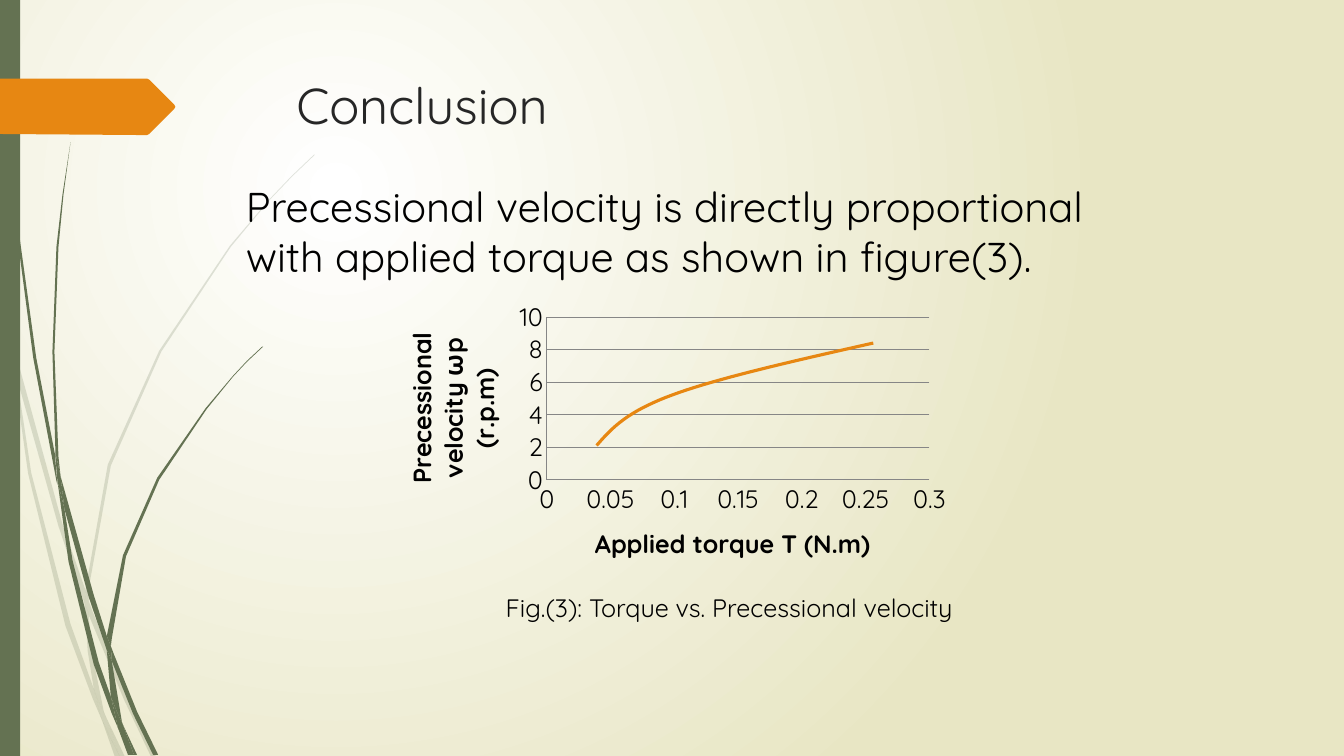
from lxml import etree
from pptx import Presentation
from pptx.chart.data import XyChartData
from pptx.dml.color import RGBColor
from pptx.enum.chart import XL_CHART_TYPE as Kind, XL_TICK_MARK as Tick
from pptx.enum.shapes import MSO_SHAPE as Preset
from pptx.enum.text import MSO_ANCHOR as Anchor, PP_ALIGN as Align
from pptx.oxml import parse_xml
from pptx.oxml.ns import qn
from pptx.util import Pt

FONT = "Quicksand"
GREEN, ORANGE, BLACK, GRAY = "647252", "E78712", "000000", "868686"
UNIT = Pt(72) / 100  # outlines are given in hundredths of an inch

PALE = [
    [(11, 350), (9, 322), (0, 282), (0, 299), (10, 344)],
    [(58, 522), (84, 599), (85, 586), (62, 520), (14, 345), (17, 376)],
    [(92, 607), (88, 596), (88, 610), (123, 694), (150, 751), (155, 751),
     (127, 692)],
    [(119, 751), (124, 751), (105, 711)],
    [(93, 683), (70, 619), (31, 469), (17, 376), (11, 350), (28, 470),
     (65, 621), (92, 693), (101, 714), (99, 707)],
    [(84, 599), (87, 646), (93, 683), (96, 692), (105, 711), (103, 706),
     (91, 646), (88, 610), (88, 608)],
    [(88, 584), (110, 462), (160, 349), (229, 245), (268, 198), (290, 175),
     (312, 154), (312, 153), (289, 175), (268, 197), (228, 244), (158, 348),
     (107, 461), (85, 584), (85, 586), (88, 596)],
    [(101, 714), (114, 751), (119, 751)],
    [(88, 608), (88, 610), (88, 596), (85, 586), (84, 599)],
    [(96, 692), (93, 683), (99, 707), (101, 714), (119, 751), (105, 711)],
]
DARK = [
    [(7, 110), (17, 233), (33, 355), (56, 477), (57, 481), (55, 457),
     (55, 453), (36, 355), (19, 232), (8, 109), (5, 48), (4, 0), (3, 0),
     (4, 48)],
    [(88, 592), (106, 645), (106, 631), (93, 590), (60, 472), (64, 505)],
    [(113, 649), (110, 641), (111, 656), (132, 708), (152, 749), (157, 749),
     (136, 706)],
    [(110, 691), (98, 657), (72, 556), (64, 505), (57, 477), (68, 557),
     (93, 659), (111, 708), (117, 722), (116, 717)],
    [(60, 472), (58, 453), (54, 349), (58, 245), (63, 193), (70, 141),
     (69.5, 141), (62, 193), (56, 245), (52, 349), (55, 449)],
    [(133, 749), (136, 749), (122, 719)],
    [(57, 477), (64, 505), (60, 472), (55, 449), (55, 453)],
    [(111, 633), (125, 552), (158, 476), (205, 406), (231, 374), (245, 359),
     (261, 344), (260, 344), (245, 358), (231, 373), (204, 405), (156, 474),
     (122, 551), (106, 631), (110, 641)],
    [(117, 722), (127, 749), (131, 749)],
    [(106, 645), (110, 691), (116, 706), (122, 719), (121, 716), (111, 656),
     (109, 651)],
    [(106, 645), (109, 651), (111, 656), (110, 641), (106, 631)],
    [(116, 706), (110, 691), (116, 717), (117, 722), (130, 749), (133, 749),
     (122, 719)],
]
ARROW = [(0, 78), (146, 78), (148, 79), (173, 104), (174, 106), (173, 108),
         (148, 133), (146, 134), (136, 134), (0, 133)]


def rgb(code):
    return RGBColor.from_string(code)


def paint(shape, code, alpha=100):
    """Give a shape a plain fill, no line and no shadow."""
    shape.shadow.inherit = False
    shape.line.fill.background()
    shape.fill.solid()
    shape.fill.fore_color.rgb = rgb(code)
    if alpha < 100:
        tone = shape.fill._xPr.find(".//" + qn("a:srgbClr"))
        etree.SubElement(tone, qn("a:alpha")).set("val", str(alpha * 1000))


def trace(slide, dots, code, alpha=100):
    """Draw a closed outline through the dots."""
    pen = slide.shapes.build_freeform(*dots[0], scale=UNIT)
    pen.add_line_segments(dots[1:], close=True)
    shape = pen.convert_to_shape()
    paint(shape, code, alpha)
    return shape


def grass(slide, blades, alpha=100):
    parts = [trace(slide, dots, GREEN, alpha) for dots in blades]
    slide.shapes.add_group_shape(parts)


def style(font, size, code=BLACK, bold=False):
    font.name, font.size, font.bold = FONT, Pt(size), bold
    font.color.rgb = rgb(code)


def write(shape, text, size, code=BLACK, anchor=Anchor.TOP, wrap=True):
    frame = shape.text_frame
    frame.text = text
    frame.word_wrap = wrap
    frame.vertical_anchor = anchor
    line = frame.paragraphs[0]
    line.alignment = Align.LEFT
    style(line.runs[0].font, size, code)


def box(slide, area, text, size, **more):
    write(slide.shapes.add_textbox(*map(Pt, area)), text, size, **more)


def backdrop(slide):
    fill = slide.background.fill
    fill.gradient()
    grad = fill._xPr.find(qn("a:gradFill"))
    for part in list(grad):
        grad.remove(part)
    stops = etree.SubElement(grad, qn("a:gsLst"))
    for place, code in ((0, "FFFFFF"), (100, "E8E6C4")):
        stop = etree.SubElement(stops, qn("a:gs"), pos=str(place * 1000))
        etree.SubElement(stop, qn("a:srgbClr"), val=code)
    ring = etree.SubElement(grad, qn("a:path"))
    ring.set("path", "circle")
    etree.SubElement(ring, qn("a:fillToRect"),
                     l="50000", t="50000", r="100000", b="100000")


def scale(axis, title, top, step):
    axis.minimum_scale, axis.maximum_scale, axis.major_unit = 0, top, step
    axis.major_tick_mark = axis.minor_tick_mark = Tick.NONE
    axis.format.line.color.rgb = rgb(GRAY)
    style(axis.tick_labels.font, 18)
    axis.tick_labels.number_format = "General"
    axis.tick_labels.number_format_is_linked = False
    frame = axis.axis_title.text_frame
    frame.text = title
    style(frame.paragraphs[0].runs[0].font, 18, bold=True)


def place(chart, x, y, w, h):
    """Fix the inner plot area, in shares of the chart."""
    area = chart._chartSpace.chart.plotArea
    for old in area.findall(qn("c:layout")):
        area.remove(old)
    layout = parse_xml('<c:layout xmlns:c="http://schemas.openxmlformats.org/'
                       'drawingml/2006/chart"><c:manualLayout/></c:layout>')
    marks = {"layoutTarget": "inner", "xMode": "edge", "yMode": "edge",
             "x": x, "y": y, "w": w, "h": h}
    for tag, val in marks.items():
        etree.SubElement(layout[0], qn("c:" + tag), val=str(val))
    area.insert(0, layout)


def curve(slide, area, dots):
    data = XyChartData()
    row = data.add_series("Series 1")
    for x, y in dots:
        row.add_data_point(x, y)
    chart = slide.shapes.add_chart(
        Kind.XY_SCATTER_SMOOTH_NO_MARKERS, *map(Pt, area), data).chart
    chart.has_legend = chart.has_title = False
    style(chart.font, 18)
    scale(chart.category_axis, "Applied torque T (N.m)", 0.3, 0.05)
    scale(chart.value_axis, "Precessional velocity ωp (r.p.m)", 10, 2)
    chart.category_axis.has_major_gridlines = False
    chart.value_axis.has_major_gridlines = True
    chart.value_axis.major_gridlines.format.line.color.rgb = rgb(GRAY)
    plot = chart.plots[0]
    plot.vary_by_categories = False
    line = plot.series[0]
    line.format.line.color.rgb = rgb(ORANGE)
    line.format.line.width = Pt(2.25)
    line._element.find(qn("c:smooth")).set("val", "1")
    place(chart, 0.27, 0.08, 0.68, 0.57)


def main():
    deck = Presentation()
    deck.slide_width, deck.slide_height = Pt(960), Pt(540)
    slide = deck.slides.add_slide(deck.slide_layouts[5])
    backdrop(slide)
    grass(slide, PALE, 20)
    grass(slide, DARK)
    bar = slide.shapes.add_shape(Preset.RECTANGLE, 0, 0, Pt(14.4), Pt(540))
    paint(bar, GREEN)
    trace(slide, ARROW, ORANGE)
    title = slide.shapes.title
    title.left, title.top, title.width, title.height = map(
        Pt, (204.5, 49, 702, 100.8))
    write(title, "Conclusion", 36, "262626")
    curve(slide, (282.2, 210.2, 401.8, 203.8),
          [(0.039, 2.1), (0.098, 5.2), (0.256, 8.4)])
    box(slide, (168.5, 120.2, 648, 90),
        "Precessional velocity is directly proportional with applied torque "
        "as shown in figure(3).", 29.7, anchor=Anchor.MIDDLE)
    box(slide, (354.2, 419.8, 352.8, 28.8),
        "Fig.(3): Torque vs. Precessional velocity", 18, wrap=False)
    deck.save("out.pptx")


if __name__ == "__main__":
    main()
